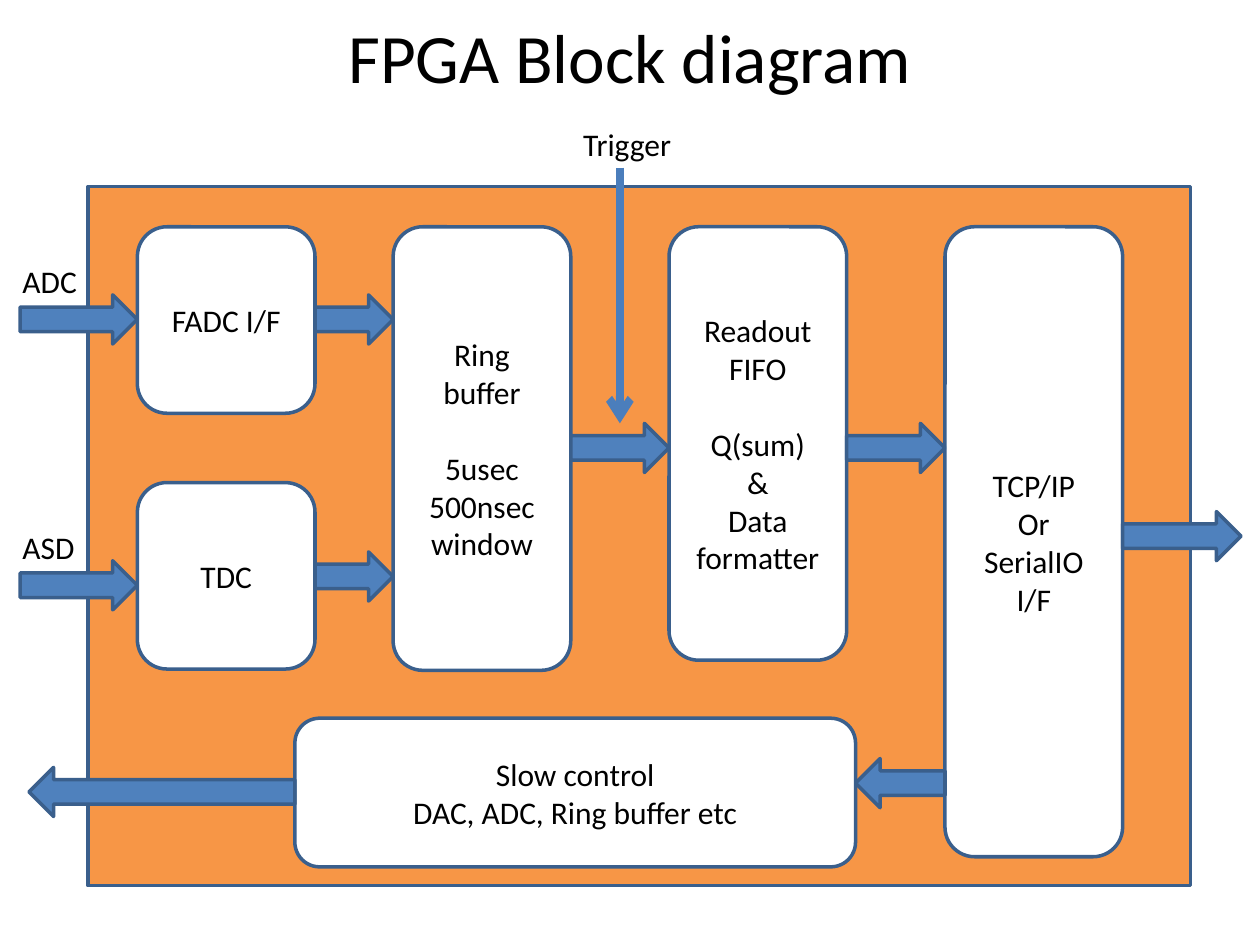
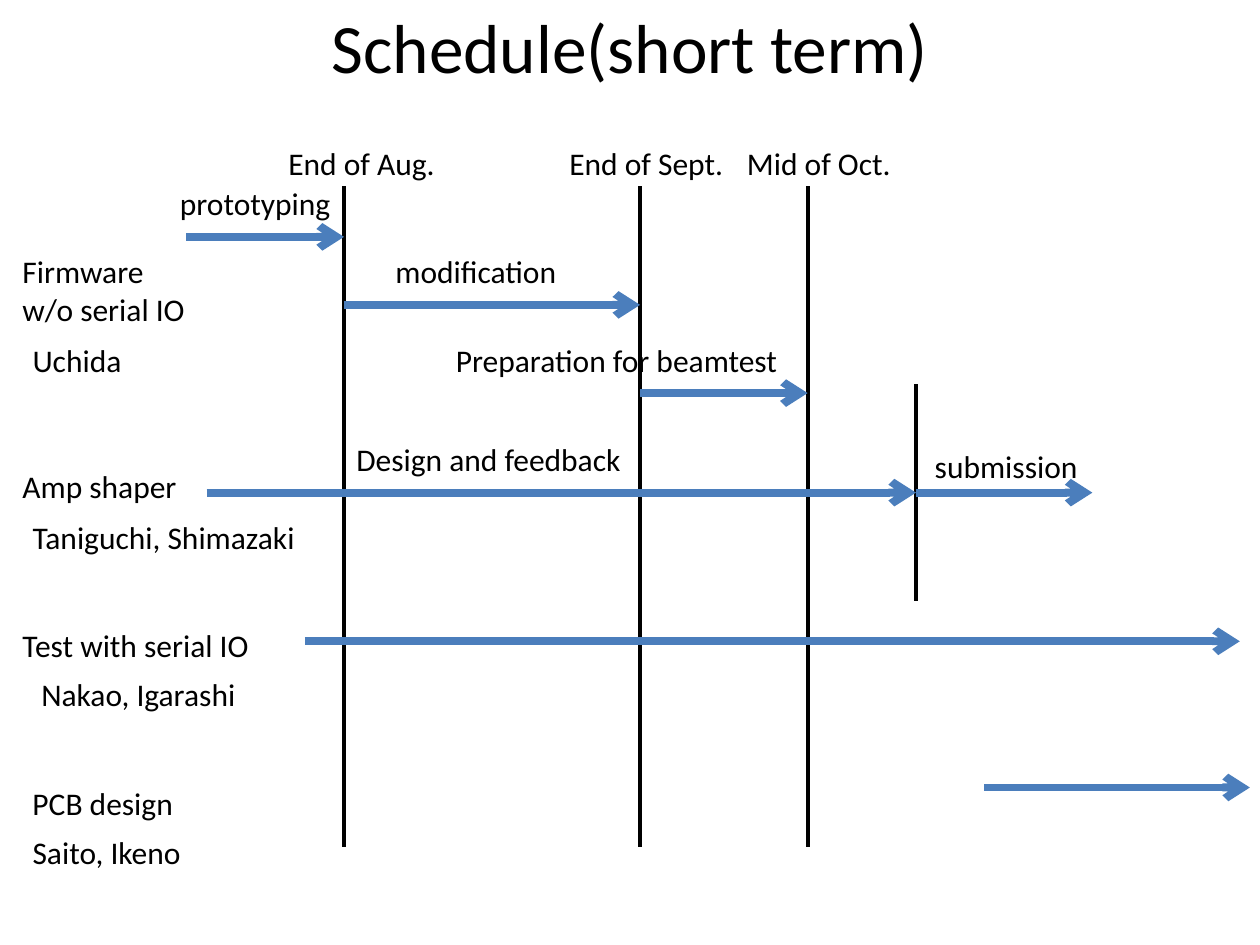
from pptx import Presentation
from pptx.dml.color import RGBColor
from pptx.enum.shapes import MSO_CONNECTOR, MSO_SHAPE
from pptx.enum.text import MSO_ANCHOR, MSO_AUTO_SIZE, PP_ALIGN
from pptx.oxml.ns import qn
from pptx.util import Inches, Pt
from lxml.etree import SubElement

COLORS = {
    "text": "000000", "block": "FFFFFF", "board": "F79646",
    "arrow": "4F81BD", "outline": "3A5F8C", "bar": "4B7EBC",
}
FONT = "Calibri"
BODY_SIZE = 18
BLANK_LINE = 22  # points of spacing that stand for one skipped line
LABEL_HEIGHT = 0.4
ARROW_HEIGHT = 0.39
BLOCK_TOP, BLOCK_WIDTH = 1.8, 1.41
CHART_TOP, CHART_BOTTOM = 1.48, 6.72


def color(name):
    return RGBColor.from_string(COLORS[name])


def box(left, top, width, height):
    return [Inches(value) for value in (left, top, width, height)]


def write(frame, lines, align, size=BODY_SIZE, gap_before=None):
    """Put one paragraph per line, with a gap above line number gap_before."""
    frame.text = "\n".join(lines)
    for index, paragraph in enumerate(frame.paragraphs):
        paragraph.alignment = align
        if index == gap_before:
            paragraph.space_before = Pt(BLANK_LINE)
        for run in paragraph.runs:
            for key, value in {"name": FONT, "size": Pt(size)}.items():
                setattr(run.font, key, value)
            run.font.color.rgb = color("text")


def add_titled_slide(presentation, text, height):
    slide = presentation.slides.add_slide(presentation.slide_layouts[5])
    title = slide.shapes.title
    title.left, title.top, title.width, title.height = box(0.5, 0.08, 9, height)
    write(title.text_frame, [text], PP_ALIGN.CENTER, 39.6)
    formats = {"vertical_anchor": MSO_ANCHOR.MIDDLE, "auto_size": MSO_AUTO_SIZE.NONE}
    for key, value in formats.items():
        setattr(title.text_frame, key, value)
    return slide


def add_filled_shape(slide, kind, bounds, fill):
    shape = slide.shapes.add_shape(kind, *box(*bounds))
    shape.shadow.inherit = False
    shape.fill.solid()
    shape.fill.fore_color.rgb = color(fill)
    shape.line.color.rgb = color("outline")
    shape.line.width = Pt(2)
    return shape


def add_block(slide, bounds, lines, gap_before=None):
    shape = add_filled_shape(slide, MSO_SHAPE.ROUNDED_RECTANGLE, bounds, "block")
    shape.text_frame.vertical_anchor = MSO_ANCHOR.MIDDLE
    write(shape.text_frame, lines, PP_ALIGN.CENTER, gap_before=gap_before)


def add_block_arrow(slide, start, end, top):
    """Draw a wide arrow from x start to x end, pointing either way."""
    kind = MSO_SHAPE.RIGHT_ARROW if end > start else MSO_SHAPE.LEFT_ARROW
    bounds = (min(start, end), top, abs(end - start), ARROW_HEIGHT)
    add_filled_shape(slide, kind, bounds, "arrow")


def add_label(slide, left, top, width, *lines):
    height = LABEL_HEIGHT + 0.31 * (len(lines) - 1)
    label = slide.shapes.add_textbox(*box(left, top, width, height))
    label.text_frame.word_wrap = False
    write(label.text_frame, lines, PP_ALIGN.LEFT)


def add_line(slide, start, end, line_color="text", width=2.25, arrow=False):
    points = [Inches(value) for value in (*start, *end)]
    line = slide.shapes.add_connector(MSO_CONNECTOR.STRAIGHT, *points)
    line.line.color.rgb = color(line_color)
    line.line.width = Pt(width)
    if arrow:
        SubElement(line.line._get_or_add_ln(), qn("a:tailEnd"), type="arrow")
    SubElement(line._element.spPr, qn("a:effectLst"))


def add_line_arrow(slide, start, end):
    add_line(slide, start, end, "bar", 4.5, arrow=True)


def build_block_diagram(presentation):
    slide = add_titled_slide(presentation, "FPGA Block diagram", 0.72)
    add_filled_shape(slide, MSO_SHAPE.RECTANGLE, (0.7, 1.48, 8.75, 5.55), "board")

    inputs, ring, readout, link = 1.09, 3.12, 5.31, 7.5
    control, control_width = 2.34, 4.45
    blocks = [
        (inputs, BLOCK_TOP, 1.48, ["FADC I/F"], None),
        (inputs, 3.83, 1.48, ["TDC"], None),
        (ring, BLOCK_TOP, 3.52, ["Ring buffer", "5usec", "500nsec window"], 1),
        (readout, BLOCK_TOP, 3.44,
         ["Readout", "FIFO", "Q(sum)", "&", "Data formatter"], 2),
        (link, BLOCK_TOP, 5, ["TCP/IP", "Or", "SerialIO", "I/F"], None),
    ]
    for left, top, height, lines, gap_before in blocks:
        add_block(slide, (left, top, BLOCK_WIDTH, height), lines, gap_before)
    add_block(slide, (control, 5.7, control_width, 1.18),
              ["Slow control", "DAC, ADC, Ring buffer etc"])

    arrows = [
        (0.16, inputs, 2.34), (0.16, inputs, 4.45),
        (inputs + BLOCK_WIDTH, ring, 2.34), (inputs + BLOCK_WIDTH, ring, 4.38),
        (ring + BLOCK_WIDTH, readout, 3.36), (readout + BLOCK_WIDTH, link, 3.36),
        (link + BLOCK_WIDTH, 9.85, 4.06),
        (link, control + control_width, 6.02), (control, 0.23, 6.09),
    ]
    for start, end, top in arrows:
        add_block_arrow(slide, start, end, top)

    add_line_arrow(slide, (4.92, 1.33), (4.92, 3.36))
    add_label(slide, 4.53, 0.94, 0.91, "Trigger")
    add_label(slide, 0.08, 2.03, 0.64, "ADC")
    add_label(slide, 0.08, 4.14, 0.62, "ASD")


def build_schedule(presentation):
    slide = add_titled_slide(presentation, "Schedule(short term)", 0.56)
    august, september, october, submission = 2.73, 5.08, 6.41, 7.27

    for x in (august, september, october):
        add_line(slide, (x, CHART_TOP), (x, CHART_BOTTOM))
    add_line(slide, (submission, 3.05), (submission, 4.77))

    bars = [
        (1.48, august, 1.88), (august, september, 2.42),
        (september, october, 3.12), (1.64, submission, 3.91),
        (submission, 8.67, 3.91), (2.42, 9.84, 5.09), (7.81, 9.92, 6.25),
    ]
    for start, end, y in bars:
        add_line_arrow(slide, (start, y), (end, y))

    labels = [
        (2.19, 1.09, 1.38, "End of Aug."),
        (4.42, 1.09, 1.44, "End of Sept."),
        (5.83, 1.09, 1.36, "Mid of Oct."),
        (1.33, 1.41, 1.41, "prototyping"),
        (3.04, 1.95, 1.49, "modification"),
        (3.52, 2.66, 2.78, "Preparation for beamtest"),
        (2.73, 3.44, 2.33, "Design and feedback"),
        (7.32, 3.5, 1.35, "submission"),
        (0.08, 1.95, 1.59, "Firmware", "w/o serial IO"),
        (0.16, 2.66, 0.92, "Uchida"),
        (0.08, 3.66, 1.44, "Amp shaper"),
        (0.16, 4.06, 2.31, "Taniguchi, Shimazaki"),
        (0.08, 4.92, 2.11, "Test with serial IO"),
        (0.23, 5.31, 1.76, "Nakao, Igarashi"),
        (0.16, 6.17, 1.33, "PCB design"),
        (0.16, 6.56, 1.39, "Saito, Ikeno"),
    ]
    for label in labels:
        add_label(slide, *label)


def main():
    presentation = Presentation()
    presentation.slide_width, presentation.slide_height = Inches(10), Inches(7.5)
    build_block_diagram(presentation)
    build_schedule(presentation)
    presentation.save("out.pptx")


if __name__ == "__main__":
    main()
